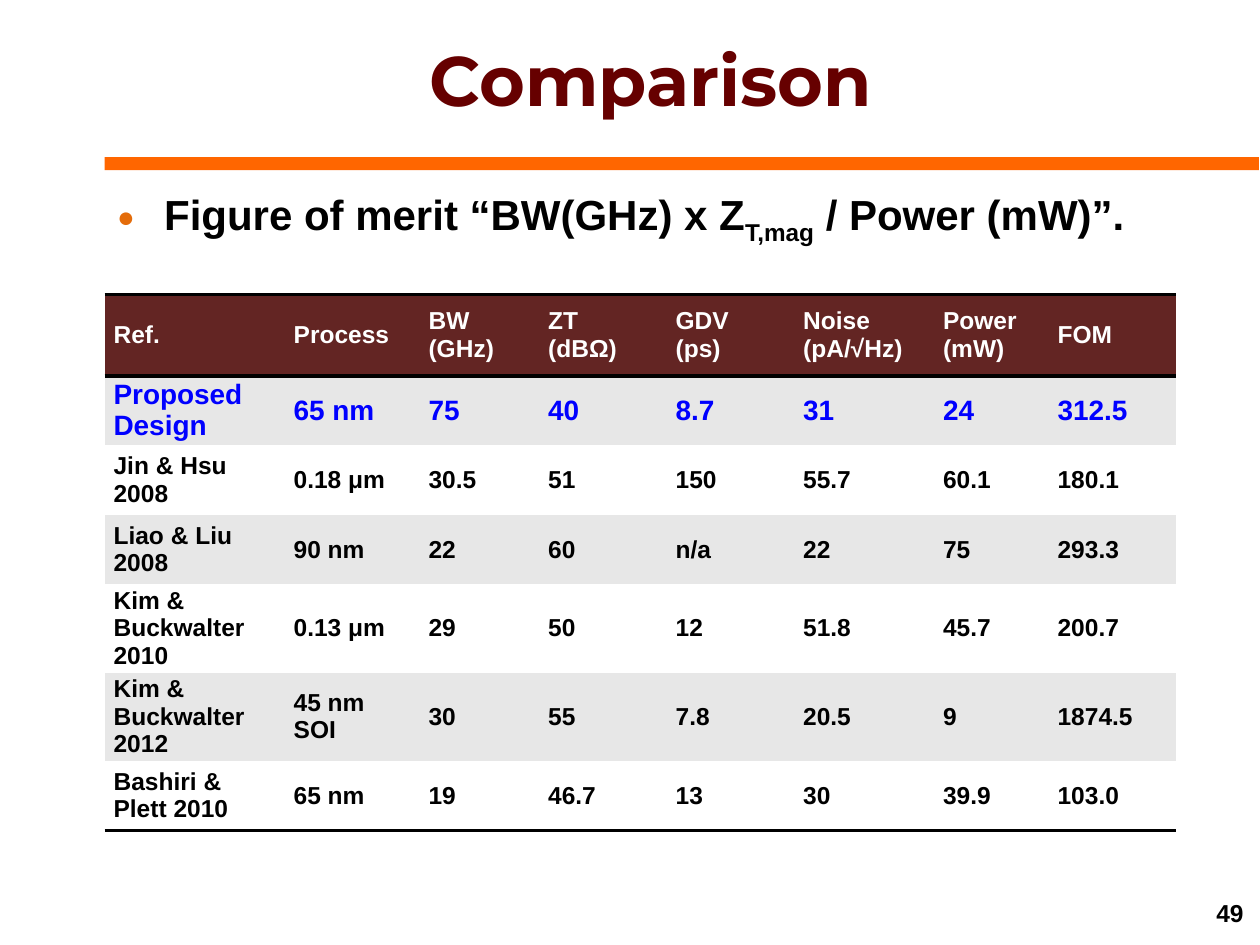
from lxml import etree
from pptx import Presentation
from pptx.dml.color import RGBColor
from pptx.enum.shapes import MSO_SHAPE
from pptx.enum.text import MSO_ANCHOR, PP_ALIGN
from pptx.oxml.ns import qn
from pptx.util import Cm, Pt

RECT = MSO_SHAPE.RECTANGLE
TOP, MIDDLE, BOTTOM = MSO_ANCHOR.TOP, MSO_ANCHOR.MIDDLE, MSO_ANCHOR.BOTTOM
LEFT, CENTER, RIGHT = PP_ALIGN.LEFT, PP_ALIGN.CENTER, PP_ALIGN.RIGHT

COLORS = {
    "title": "660000", "rule": "FF6600", "bullet": "E46C0A", "text": "000000",
    "header": "632523", "header_text": "FFFFFF", "proposed": "0000FF",
    "band": "E7E7E7", "plain": "FFFFFF",
}
MARGIN = 2.11
COL_WIDTHS = [3.63, 2.72, 2.41, 2.57, 2.57, 2.82, 2.31, 2.57]
ROW_HEIGHTS = [1.65, 1.4, 1.4, 1.4, 1.65, 1.65, 1.4]
ROWS = [
    ["Ref.", "Process", "BW\n(GHz)", "ZT\n(dBΩ)", "GDV\n(ps)", "Noise\n(pA/√Hz)", "Power (mW)", "FOM"],
    ["Proposed Design", "65 nm", "75", "40", "8.7", "31", "24", "312.5"],
    ["Jin & Hsu 2008", "0.18 μm", "30.5", "51", "150", "55.7", "60.1", "180.1"],
    ["Liao & Liu 2008", "90 nm", "22", "60", "n/a", "22", "75", "293.3"],
    ["Kim & Buckwalter 2010", "0.13 μm", "29", "50", "12", "51.8", "45.7", "200.7"],
    ["Kim & Buckwalter 2012", "45 nm SOI", "30", "55", "7.8", "20.5", "9", "1874.5"],
    ["Bashiri & Plett 2010", "65 nm", "19", "46.7", "13", "30", "39.9", "103.0"],
]


def rgb(name):
    return RGBColor.from_string(COLORS[name])


def set_font(font, color="text", **formats):
    values = {"name": "Arial", "size": Pt(14), "bold": True, **formats}
    for key, value in values.items():
        setattr(font, key, value)
    font.color.rgb = rgb(color)


def add_text(s, box, text, anchor, align, color="text", **formats):
    tf = s.shapes.add_textbox(*map(Cm, box)).text_frame
    tf.word_wrap = True
    tf.vertical_anchor = anchor
    p = tf.paragraphs[0]
    p.alignment = align
    if text:
        r = p.add_run()
        r.text = text
        set_font(r.font, color, **formats)
    return p


def add_rule(s):
    sp = s.shapes.add_shape(RECT, Cm(MARGIN), Cm(3.17), Cm(23.27), Cm(0.26))
    sp.shadow.inherit = False
    sp.fill.solid()
    sp.fill.fore_color.rgb = rgb("rule")
    sp.line.fill.background()


def add_bullet(p, indent):
    pPr = p._p.get_or_add_pPr()
    pPr.set("marL", str(Cm(indent)))
    pPr.set("indent", str(-Cm(indent)))
    clr = etree.SubElement(pPr, qn("a:buClr"))
    etree.SubElement(clr, qn("a:srgbClr"), val=COLORS["bullet"])
    etree.SubElement(pPr, qn("a:buSzPct"), val="70000")
    etree.SubElement(pPr, qn("a:buFont"), typeface="Arial")
    etree.SubElement(pPr, qn("a:buChar"), char="●")


def add_merit(s):
    p = add_text(s, (MARGIN, 3.68, 22.02, 1.73), "", TOP, LEFT)
    add_bullet(p, 0.95)
    parts = [("Figure of merit “BW(GHz) x Z", 0), ("T,mag", -25000), (" / Power (mW)”.", 0)]
    for text, baseline in parts:
        r = p.add_run()
        r.text = text
        set_font(r.font, size=Pt(24))
        if baseline:
            r._r.get_or_add_rPr().set("baseline", str(baseline))


def set_borders(cell, ruled):
    tcPr = cell._tc.get_or_add_tcPr()
    for i, side in enumerate("LRTB"):
        ln = etree.Element(qn(f"a:ln{side}"), w=str(Pt(2)))
        if side in ruled:
            fill = etree.SubElement(ln, qn("a:solidFill"))
            etree.SubElement(fill, qn("a:srgbClr"), val=COLORS["text"])
        else:
            etree.SubElement(ln, qn("a:noFill"))
        tcPr.insert(i, ln)


def fill_cell(cell, text, fill, color, size, ruled):
    formats = {"margin_left": Cm(0.18), "margin_right": Cm(0.18), "margin_top": 0,
               "margin_bottom": 0, "vertical_anchor": MIDDLE, "text": text}
    for key, value in formats.items():
        setattr(cell, key, value)
    cell.fill.solid()
    cell.fill.fore_color.rgb = rgb(fill)
    for p in cell.text_frame.paragraphs:
        for r in p.runs:
            set_font(r.font, color, size=Pt(size))
    set_borders(cell, ruled)


def add_comparison(s):
    table = s.shapes.add_table(len(ROWS), len(COL_WIDTHS), Cm(MARGIN), Cm(5.93),
                               Cm(sum(COL_WIDTHS)), Cm(sum(ROW_HEIGHTS))).table
    for col, width in zip(table.columns, COL_WIDTHS):
        col.width = Cm(width)
    styles = {0: ("header", "header_text", 14, "TB"), 1: ("band", "proposed", 16, "T"),
              len(ROWS) - 1: ("plain", "text", 14, "B")}
    for i, values in enumerate(ROWS):
        table.rows[i].height = Cm(ROW_HEIGHTS[i])
        style = styles.get(i, ("band" if i % 2 else "plain", "text", 14, ""))
        for j, text in enumerate(values):
            fill_cell(table.cell(i, j), text, *style)


def main():
    prs = Presentation()
    prs.slide_width, prs.slide_height = Cm(25.4), Cm(19.05)
    s = prs.slides.add_slide(prs.slide_layouts[6])
    add_rule(s)
    add_text(s, (MARGIN, 0.2, 22.02, 2.75), "Comparison", MIDDLE, CENTER, "title",
             name="Montserrat", size=Pt(40))
    add_merit(s)
    add_text(s, (23.47, 17.8, 1.85, 1.02), "49", BOTTOM, RIGHT)
    add_comparison(s)
    prs.save("out.pptx")


if __name__ == "__main__":
    main()
